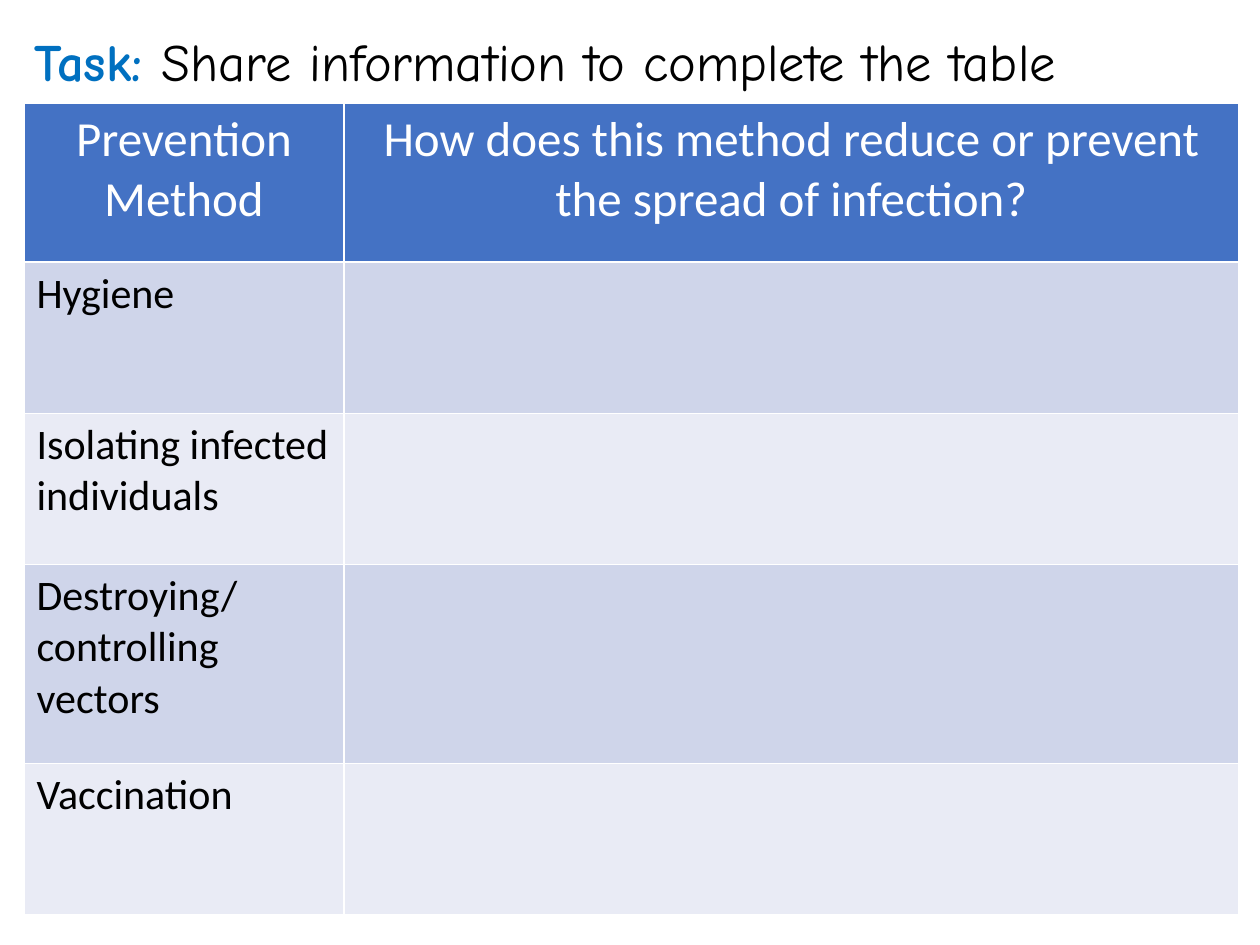
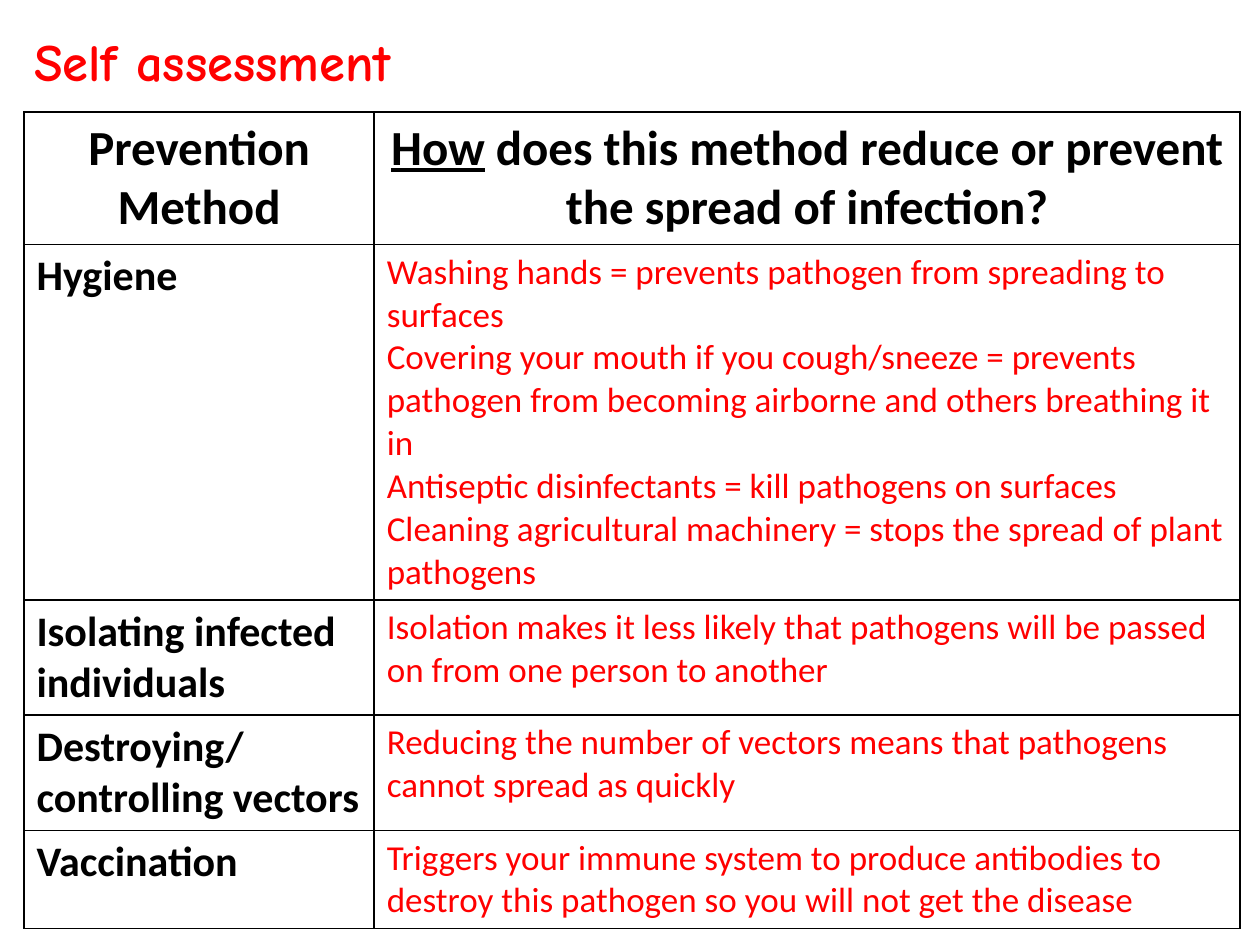
from lxml.etree import SubElement
from pptx import Presentation
from pptx.dml.color import RGBColor
from pptx.enum.text import MSO_ANCHOR, MSO_AUTO_SIZE, PP_ALIGN
from pptx.oxml.ns import qn
from pptx.util import Inches, Pt

BLACK = RGBColor(0x00, 0x00, 0x00)
WHITE = RGBColor(0xFF, 0xFF, 0xFF)
RED = RGBColor(0xFF, 0x00, 0x00)
TASK_BLUE = RGBColor(0x00, 0x70, 0xC0)
HEADER_BLUE = RGBColor(0x44, 0x72, 0xC4)
BANDS = (RGBColor(0xCF, 0xD5, 0xEA), RGBColor(0xE9, 0xEB, 0xF5))

TITLE_FONT, TABLE_FONT = "Comic Neue", "Calibri"
TITLE_SIZE, HEADER_SIZE, METHOD_SIZE, ANSWER_SIZE = 30, 28, 24, 20
TABLE_LEFT = 0.19

METHODS = [
    ["Hygiene"],
    ["Isolating infected individuals"],
    ["Destroying/", "controlling vectors"],
    ["Vaccination"],
]
ANSWERS = [
    [
        "Washing hands = prevents pathogen from spreading to surfaces",
        "Covering your mouth if you cough/sneeze = prevents pathogen from becoming airborne "
        "and others breathing it in",
        "Antiseptic disinfectants = kill pathogens on surfaces",
        "Cleaning agricultural machinery = stops the spread of plant pathogens",
    ],
    ["Isolation makes it less likely that pathogens will be passed on from one person to another"],
    ["Reducing the number of vectors means that pathogens cannot spread as quickly"],
    ["Triggers your immune system to produce antibodies to destroy this pathogen "
     "so you will not get the disease"],
]
# Words between underscores are underlined.
SLIDES = [
    {
        "title": [("Task: ", TASK_BLUE, True),
                  ("Share information to complete the table", BLACK, False)],
        "question": "How does this method reduce or prevent the spread of infection?",
        "answers": [[] for _ in METHODS],
        "top": 0.82,
        "columns": (2.54, 7.1),
        "rows": (1.26, 1.2, 1.2, 1.58, 1.2),
        "fills": (HEADER_BLUE, *BANDS, *BANDS),
        "header_color": WHITE,
        "border": WHITE,
        "bold": False,
    },
    {
        "title": [("Self assessment", RED, True)],
        "question": "_How_ does this method reduce or prevent the spread of infection?",
        "answers": ANSWERS,
        "top": 0.89,
        "columns": (2.78, 6.87),
        "rows": (0.82, 2.2, 0.72, 0.72, 0.72),
        "fills": (None,) * 5,
        "header_color": BLACK,
        "border": BLACK,
        "bold": True,
    },
]


def format_run(run, font, size, color, bold):
    run.font.name = font
    run.font.size = Pt(size)
    run.font.color.rgb = color
    run.font.bold = bold


def add_title(slide, parts):
    title = slide.shapes.title
    title.left, title.top = Inches(0.17), Inches(0.24)
    title.width, title.height = Inches(9.64), Inches(0.65)
    frame = title.text_frame
    frame.auto_size = MSO_AUTO_SIZE.NONE
    frame.vertical_anchor = MSO_ANCHOR.TOP
    paragraph = frame.paragraphs[0]
    paragraph.alignment = PP_ALIGN.LEFT
    paragraph.line_spacing = 0.9
    paragraph.space_before = Pt(10)
    for text, color, bold in parts:
        run = paragraph.add_run()
        run.text = text
        format_run(run, TITLE_FONT, TITLE_SIZE, color, bold)


def style_cell(cell, fill, border):
    """Draw the four borders first: the schema wants them before the fill."""
    properties = cell._tc.get_or_add_tcPr()
    for side in ("lnL", "lnR", "lnT", "lnB"):
        line = SubElement(properties, qn(f"a:{side}"), w=str(Pt(1)))
        solid = SubElement(line, qn("a:solidFill"))
        SubElement(solid, qn("a:srgbClr"), val=str(border))
    if fill is None:
        cell.fill.background()
    else:
        cell.fill.solid()
        cell.fill.fore_color.rgb = fill


def write_cell(cell, lines, size, color, bold, align=PP_ALIGN.LEFT):
    frame = cell.text_frame
    for index, line in enumerate(lines):
        paragraph = frame.add_paragraph() if index else frame.paragraphs[0]
        paragraph.alignment = align
        for part, text in enumerate(line.split("_")):
            if text:
                run = paragraph.add_run()
                run.text = text
                format_run(run, TABLE_FONT, size, color, bold)
                run.font.underline = part % 2 == 1


def add_methods_table(slide, content):
    columns, rows = content["columns"], content["rows"]
    table = slide.shapes.add_table(
        len(rows), len(columns), Inches(TABLE_LEFT), Inches(content["top"]),
        Inches(sum(columns)), Inches(sum(rows))).table
    table.first_row = table.horz_banding = False
    for column, width in zip(table.columns, columns):
        column.width = Inches(width)
    for row, height, fill in zip(table.rows, rows, content["fills"]):
        row.height = Inches(height)
        for cell in row.cells:
            style_cell(cell, fill, content["border"])

    bold = content["bold"]
    for column, heading in enumerate(("Prevention Method", content["question"])):
        write_cell(table.cell(0, column), [heading], HEADER_SIZE,
                   content["header_color"], bold, PP_ALIGN.CENTER)
    for row, (method, answer) in enumerate(zip(METHODS, content["answers"]), start=1):
        write_cell(table.cell(row, 0), method, METHOD_SIZE, BLACK, bold)
        write_cell(table.cell(row, 1), answer, ANSWER_SIZE, RED, False)


def main():
    deck = Presentation()
    deck.slide_width, deck.slide_height = Inches(10), Inches(7.5)
    title_only = deck.slide_layouts[5]
    for content in SLIDES:
        slide = deck.slides.add_slide(title_only)
        add_title(slide, content["title"])
        add_methods_table(slide, content)
    deck.save("out.pptx")


if __name__ == "__main__":
    main()
